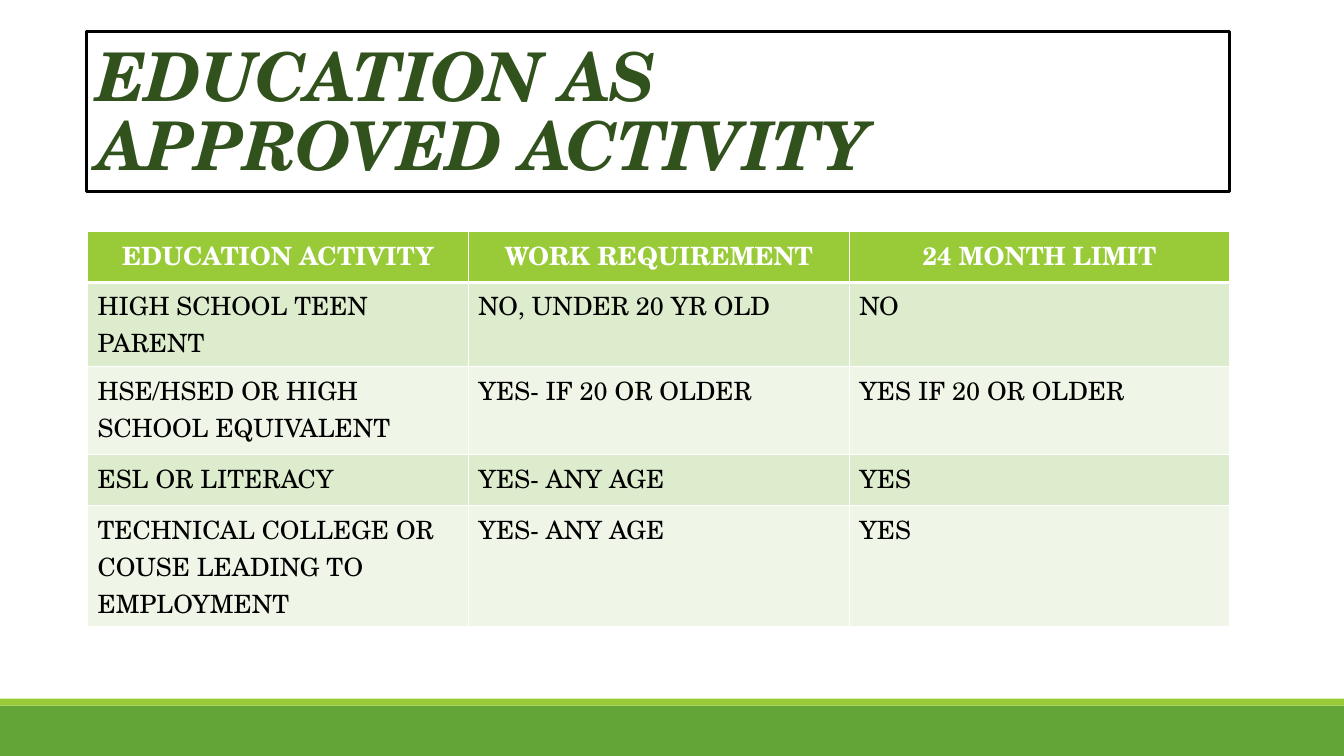
from lxml import etree
from pptx import Presentation
from pptx import util as u
from pptx.dml.color import RGBColor
from pptx.enum import shapes, text
from pptx.oxml.ns import qn

# Content
HEADING = "EDUCATION AS \vAPPROVED ACTIVITY"
ACTIVITIES = [
    ("EDUCATION ACTIVITY", "WORK REQUIREMENT", "24 MONTH LIMIT"),
    ("HIGH SCHOOL TEEN PARENT", "NO, UNDER 20 YR OLD", "NO"),
    ("HSE/HSED OR HIGH SCHOOL EQUIVALENT", "YES- IF 20 OR OLDER", "YES IF 20 OR OLDER"),
    ("ESL OR LITERACY", "YES- ANY AGE", "YES"),
    ("TECHNICAL COLLEGE OR COUSE LEADING TO EMPLOYMENT", "YES- ANY AGE", "YES"),
]

# Format
FONT = "TeX Gyre Schola"
WHITE = RGBColor(0xFF, 0xFF, 0xFF)
BLACK = RGBColor(0, 0, 0)
GREY = RGBColor(0x80, 0x80, 0x80)
DARK_GREEN = RGBColor(0x31, 0x52, 0x1C)
GREEN = RGBColor(0x63, 0xA5, 0x37)
LIME = RGBColor(0x99, 0xCB, 0x38)
BANDS = [RGBColor(0xEF, 0xF6, 0xE8), RGBColor(0xDE, 0xEC, 0xCE)]

SLIDE_W, SLIDE_H = 960, 540
FOOTER_BANDS = [(504, 36, GREEN), (499, 5, LIME)]
TITLE_BOX = (61.5, 22.3, 817, 114.5)
TABLE_LEFT, TABLE_TOP, COLUMN_W = 62.6, 165.2, 272
ROW_HEIGHTS = [36.5, 36.5, 63, 36.5, 82]


def write(frame, words, size=18, color=BLACK, bold=False, italic=False,
          align=text.PP_ALIGN.LEFT, spacing=None, tracking=None):
    frame.text = words
    paragraph = frame.paragraphs[0]
    paragraph.alignment = align
    if spacing:
        paragraph.line_spacing = spacing
    for run in paragraph.runs:
        font = run.font
        font.name, font.size = FONT, u.Pt(size)
        font.bold, font.italic = bold, italic
        font.color.rgb = color
        if tracking:
            font._element.set("spc", str(int(tracking * 100)))


def border_cell(cell, bottom_width):
    properties = cell._tc.get_or_add_tcPr()
    widths = {"lnL": 1, "lnR": 1, "lnT": 1, "lnB": bottom_width}
    for position, (side, width) in enumerate(widths.items()):
        border = etree.Element(qn(f"a:{side}"), w=str(u.Pt(width)))
        fill = etree.SubElement(border, qn("a:solidFill"))
        etree.SubElement(fill, qn("a:srgbClr"), val=str(WHITE))
        properties.insert(position, border)


deck = Presentation()
deck.slide_width, deck.slide_height = u.Pt(SLIDE_W), u.Pt(SLIDE_H)
slide = deck.slides.add_slide(deck.slide_layouts[5])

# Footer bands
for top, height, color in FOOTER_BANDS:
    band = slide.shapes.add_shape(shapes.MSO_SHAPE.RECTANGLE, 0, u.Pt(top),
                                  u.Pt(SLIDE_W), u.Pt(height))
    band.shadow.inherit = False
    band.fill.solid()
    band.fill.fore_color.rgb = color
    band.line.fill.background()

# Rule under the heading
rule_y = u.Pt(TITLE_BOX[1] + TITLE_BOX[3])
rule = slide.shapes.add_connector(shapes.MSO_CONNECTOR.STRAIGHT,
                                  u.Pt(94.3), rule_y, u.Pt(879), rule_y)
rule.line.color.rgb, rule.line.width = GREY, u.Pt(0.5)
etree.SubElement(rule._element.spPr, qn("a:effectLst"))

# Heading, brought in front of the rule
heading = slide.shapes.title
slide.shapes._spTree.append(heading._element)
heading.left, heading.top, heading.width, heading.height = map(u.Pt, TITLE_BOX)
heading.line.color.rgb, heading.line.width = BLACK, u.Pt(2.25)
heading.text_frame.auto_size = text.MSO_AUTO_SIZE.NONE
heading.text_frame.vertical_anchor = text.MSO_ANCHOR.BOTTOM
heading.text_frame.margin_bottom = u.Pt(5.5)
write(heading.text_frame, HEADING, size=48, color=DARK_GREEN, bold=True,
      italic=True, spacing=0.85, tracking=-0.5)

# Activity table
column_count = len(ACTIVITIES[0])
table = slide.shapes.add_table(
    len(ACTIVITIES), column_count, u.Pt(TABLE_LEFT), u.Pt(TABLE_TOP),
    u.Pt(COLUMN_W * column_count), u.Pt(sum(ROW_HEIGHTS))).table
for column in table.columns:
    column.width = u.Pt(COLUMN_W)
for r, (activity, height) in enumerate(zip(ACTIVITIES, ROW_HEIGHTS)):
    table.rows[r].height = u.Pt(height)
    header = r == 0
    for c, words in enumerate(activity):
        cell = table.cell(r, c)
        cell.fill.solid()
        cell.fill.fore_color.rgb = LIME if header else BANDS[r % 2]
        border_cell(cell, bottom_width=3 if header else 1)
        write(cell.text_frame, words, bold=header,
              color=WHITE if header else BLACK,
              align=text.PP_ALIGN.CENTER if header else text.PP_ALIGN.LEFT)

deck.save("out.pptx")
